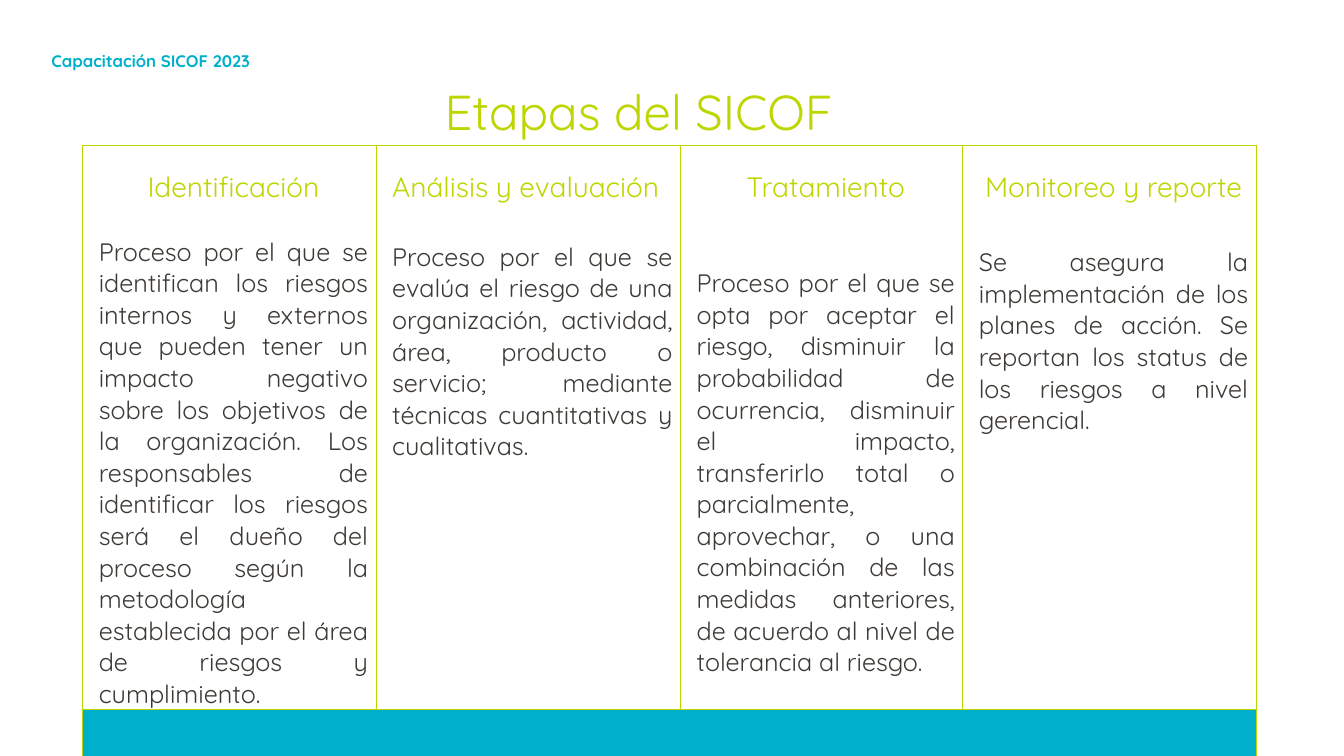
from dataclasses import dataclass

import pptx
import pptx.dml.color
import pptx.enum.text
import pptx.oxml.ns
import pptx.util
from lxml import etree

Inches = pptx.util.Inches
Pt = pptx.util.Pt
ALIGN = pptx.enum.text.PP_ALIGN


@dataclass(frozen=True)
class Theme:
    font: str = "Quicksand"
    lime: str = "BED600"
    cyan: str = "00B0CA"
    ink: str = "3D3935"
    white: str = "FFFFFF"
    title: float = 35
    label: float = 12
    heading: float = 20
    body: float = 18
    border: float = 0.75


THEME = Theme()

# heading, heading alignment, gap below it in points, column width, description
STAGES = [
    ("Identificación", ALIGN.CENTER, 22.5, 2.91,
     "Proceso por el que se identifican los riesgos internos y externos que "
     "pueden tener un impacto negativo sobre los objetivos de la organización. "
     "Los responsables de identificar los riesgos será el dueño del proceso "
     "según la metodología establecida por el área de riesgos y cumplimiento."),
    ("Análisis y evaluación", ALIGN.JUSTIFY, 26.25, 3.02,
     "Proceso por el que se evalúa el riesgo de una organización, actividad, "
     "área, producto o servicio; mediante técnicas cuantitativas y cualitativas."),
    ("Tratamiento", ALIGN.CENTER, 45, 2.8,
     "Proceso por el que se opta por aceptar el riesgo, disminuir la "
     "probabilidad de ocurrencia, disminuir el impacto, transferirlo total o "
     "parcialmente, aprovechar, o una combinación de las medidas anteriores, "
     "de acuerdo al nivel de tolerancia al riesgo."),
    ("Monitoreo y reporte", ALIGN.CENTER, 30, 2.91,
     "Se asegura la implementación de los planes de acción. Se reportan los "
     "status de los riesgos a nivel gerencial."),
]
ROW_HEIGHTS = (5.6, 0.46)


def rgb(color):
    return pptx.dml.color.RGBColor.from_string(color)


def add_run(p, text, size, color, bold=False):
    r = p.add_run()
    r.text = text
    r.font.name = THEME.font
    r.font.size = Pt(size)
    r.font.bold = bold
    r.font.color.rgb = rgb(color)


def set_line(sp, text, size, color, bold=False):
    """Fill a shape with one left-aligned line, without insets."""
    tf = sp.text_frame
    tf.word_wrap = True
    tf.auto_size = pptx.enum.text.MSO_AUTO_SIZE.NONE
    tf.vertical_anchor = pptx.enum.text.MSO_ANCHOR.TOP
    tf.margin_left = tf.margin_top = tf.margin_right = tf.margin_bottom = 0
    p = tf.paragraphs[0]
    p.alignment = ALIGN.LEFT
    p.line_spacing = 0.9
    add_run(p, text, size, color, bold)


def style_cell(cell, fill):
    tcPr = cell._tc.get_or_add_tcPr()
    for side in ("lnL", "lnR", "lnT", "lnB"):
        ln = etree.SubElement(tcPr, pptx.oxml.ns.qn(f"a:{side}"),
                              w=str(Pt(THEME.border)))
        solid = etree.SubElement(ln, pptx.oxml.ns.qn("a:solidFill"))
        etree.SubElement(solid, pptx.oxml.ns.qn("a:srgbClr"), val=THEME.lime)
    cell.fill.solid()
    cell.fill.fore_color.rgb = rgb(fill)


def fill_stage(cell, heading, align, gap, description):
    cell.margin_left, cell.margin_top = Inches(0.16), Inches(0.24)
    cell.margin_right, cell.margin_bottom = Inches(0.08), 0
    p = cell.text_frame.paragraphs[0]
    p.alignment = align
    add_run(p, heading, THEME.heading, THEME.lime)
    p = cell.text_frame.add_paragraph()
    p.alignment = ALIGN.JUSTIFY
    p.space_before = Pt(gap)
    add_run(p, description, THEME.body, THEME.ink)


def add_stage_table(s):
    width = sum(stage[3] for stage in STAGES)
    table = s.shapes.add_table(
        len(ROW_HEIGHTS), len(STAGES), Inches(0.82), Inches(1.44),
        Inches(width), Inches(sum(ROW_HEIGHTS))).table
    table.first_row = table.horz_banding = False
    for row, height in zip(table.rows, ROW_HEIGHTS):
        row.height = Inches(height)
    for i, (heading, align, gap, col_width, description) in enumerate(STAGES):
        table.columns[i].width = Inches(col_width)
        style_cell(table.cell(0, i), THEME.white)
        fill_stage(table.cell(0, i), heading, align, gap, description)
        style_cell(table.cell(1, i), THEME.cyan)
    table.cell(1, 0).merge(table.cell(1, len(STAGES) - 1))


def main():
    prs = pptx.Presentation()
    prs.slide_width, prs.slide_height = Inches(13.33), Inches(7.5)
    s = prs.slides.add_slide(prs.slide_layouts.get_by_name("Title Only"))
    s.background.fill.solid()
    s.background.fill.fore_color.rgb = rgb(THEME.white)

    title = s.shapes.title
    title.left, title.top = Inches(4.41), Inches(0.87)
    title.width, title.height = Inches(4.48), Inches(0.31)
    set_line(title, "Etapas del SICOF", THEME.title, THEME.lime)

    add_stage_table(s)

    label = s.shapes.add_textbox(Inches(0.51), Inches(0.53),
                                 Inches(2.22), Inches(0.25))
    set_line(label, "Capacitación SICOF 2023", THEME.label, THEME.cyan, bold=True)
    prs.save("out.pptx")


if __name__ == "__main__":
    main()
